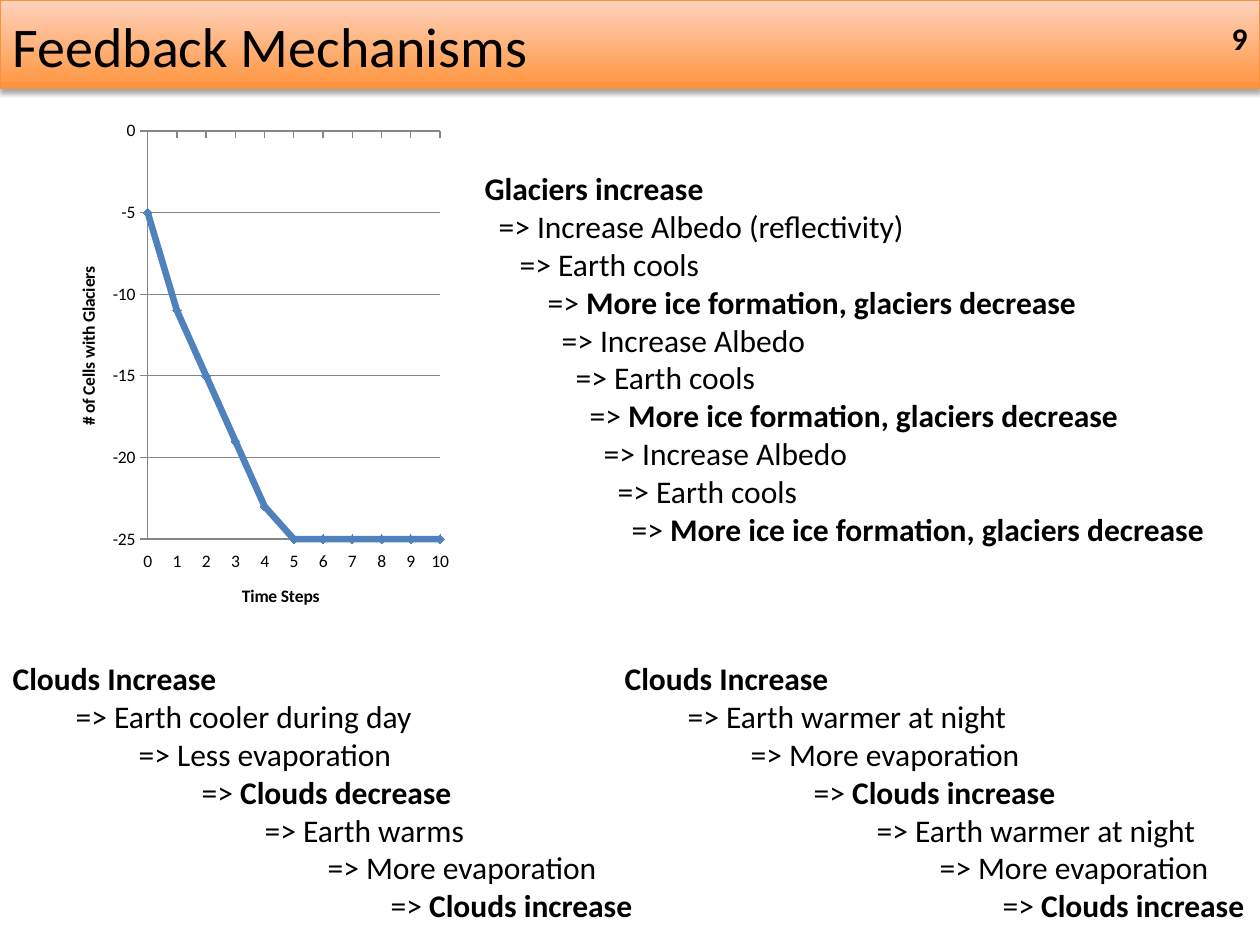
"""Builds the slide on feedback mechanisms between glaciers, clouds and climate."""
from dataclasses import dataclass

import lxml.etree
import pptx
import pptx.chart.data
import pptx.dml.color
import pptx.enum.chart
import pptx.enum.shapes
import pptx.enum.text
import pptx.oxml
import pptx.oxml.ns
import pptx.util


@dataclass(frozen=True)
class Theme:
    font: str = "Calibri"
    text: str = "000000"
    banner_bottom: str = "FF953E"
    banner_top: str = "FFD2BD"
    banner_line: str = "F69240"
    series: str = "4F81BD"
    axis: str = "868686"
    title_pt: int = 32
    body_pt: int = 18
    chart_pt: int = 10


THEME = Theme()
EMU_PER_PX = 914400 / 126
ARROW = "=> "
CLOUD_STEP = 63
GLACIER_INDENTS = [0, 14, 35] + [63 + 14 * i for i in range(7)]

GLACIERS = [
    ("Glaciers increase", True),
    ("Increase Albedo (reflectivity)", False),
    ("Earth cools", False),
    ("More ice formation, glaciers decrease", True),
    ("Increase Albedo", False),
    ("Earth cools", False),
    ("More ice formation, glaciers decrease", True),
    ("Increase Albedo", False),
    ("Earth cools", False),
    ("More ice ice formation, glaciers decrease", True),
]
CLOUDS_DAY = [
    ("Clouds Increase", True),
    ("Earth cooler during day", False),
    ("Less evaporation", False),
    ("Clouds decrease", True),
    ("Earth warms", False),
    ("More evaporation", False),
    ("Clouds increase", True),
]
CLOUDS_NIGHT = [
    ("Clouds Increase", True),
    ("Earth warmer at night", False),
    ("More evaporation", False),
    ("Clouds increase", True),
    ("Earth warmer at night", False),
    ("More evaporation", False),
    ("Clouds increase", True),
]
GLACIER_CELLS = [-5, -11, -15, -19, -23] + [-25] * 6


def px(n):
    return pptx.util.Emu(round(n * EMU_PER_PX))


def rgb(value):
    return pptx.dml.color.RGBColor.from_string(value)


def style(font, size, bold=False):
    font.name = THEME.font
    font.size = pptx.util.Pt(size)
    font.bold = bold
    font.color.rgb = rgb(THEME.text)


def place(sp, left, top, width, height):
    sp.left, sp.top, sp.width, sp.height = map(px, (left, top, width, height))


def set_frame(tf, anchor):
    tf.auto_size = pptx.enum.text.MSO_AUTO_SIZE.NONE
    tf.word_wrap = True
    tf.vertical_anchor = anchor


def add_banner(s):
    sp = s.shapes.add_shape(pptx.enum.shapes.MSO_SHAPE.RECTANGLE, 0, 0, px(1260), px(88))
    sp.fill.gradient()
    sp.fill.gradient_angle = 90
    for stop, color in zip(sp.fill.gradient_stops, (THEME.banner_bottom, THEME.banner_top)):
        stop.color.rgb = rgb(color)
    sp.line.color.rgb = rgb(THEME.banner_line)
    sp.line.width = pptx.util.Pt(0.75)
    sp.shadow.inherit = False
    effects = sp.element.spPr.find(pptx.oxml.ns.qn("a:effectLst"))
    effects.append(pptx.oxml.parse_xml(
        f'<a:outerShdw {pptx.oxml.ns.nsdecls("a")} blurRad="40000" dist="23000" dir="5400000" '
        'rotWithShape="0"><a:srgbClr val="000000"><a:alpha val="35000"/></a:srgbClr></a:outerShdw>'))
    s.shapes.element.insert(2, sp.element)


def fill_line(sp, text, size, align, anchor, bold=False):
    tf = sp.text_frame
    set_frame(tf, anchor)
    tf.text = text
    p = tf.paragraphs[0]
    p.alignment = align
    style(p.runs[0].font, size, bold)


def fill_chain(sp, box, steps, indents):
    place(sp, *box)
    tf = sp.text_frame
    set_frame(tf, pptx.enum.text.MSO_ANCHOR.TOP)
    for i, ((text, bold), indent) in enumerate(zip(steps, indents)):
        p = tf.paragraphs[0] if i == 0 else tf.add_paragraph()
        p.space_before = pptx.util.Pt(0)
        p.alignment = pptx.enum.text.PP_ALIGN.LEFT
        pPr = p._p.get_or_add_pPr()
        pPr.set("marL", str(px(indent)))
        pPr.set("indent", "0")
        lxml.etree.SubElement(pPr, pptx.oxml.ns.qn("a:buNone"))
        parts = [(ARROW, False), (text, bold)] if i else [(text, bold)]
        for part, heavy in parts:
            r = p.add_run()
            r.text = part
            style(r.font, THEME.body_pt, heavy)


def format_axis(axis, title, low, high, step):
    axis.minimum_scale, axis.maximum_scale, axis.major_unit = low, high, step
    axis.major_tick_mark = pptx.enum.chart.XL_TICK_MARK.OUTSIDE
    axis.minor_tick_mark = pptx.enum.chart.XL_TICK_MARK.NONE
    axis.tick_label_position = pptx.enum.chart.XL_TICK_LABEL_POSITION.LOW
    axis.format.line.color.rgb = rgb(THEME.axis)
    axis.format.line.width = pptx.util.Pt(0.75)
    axis.axis_title.text_frame.text = title
    style(axis.axis_title.text_frame.paragraphs[0].runs[0].font, THEME.chart_pt, True)


def set_plot_area(chart, x, y, w, h):
    area = chart._chartSpace.chart.plotArea
    for old in area.findall(pptx.oxml.ns.qn("c:layout")):
        area.remove(old)
    sizes = "".join(f'<c:{k} val="{v}"/>' for k, v in zip("xywh", (x, y, w, h)))
    area.insert(0, pptx.oxml.parse_xml(
        f'<c:layout {pptx.oxml.ns.nsdecls("c")}><c:manualLayout><c:layoutTarget val="inner"/>'
        f'<c:xMode val="edge"/><c:yMode val="edge"/>{sizes}</c:manualLayout></c:layout>'))


def add_glacier_chart(s):
    data = pptx.chart.data.XyChartData()
    series = data.add_series("Series 1")
    for step, cells in enumerate(GLACIER_CELLS):
        series.add_data_point(step, cells)
    chart = s.shapes.add_chart(pptx.enum.chart.XL_CHART_TYPE.XY_SCATTER_LINES,
                               px(66), px(116), px(430), px(498), data).chart
    chart.has_legend = False
    chart.has_title = False
    style(chart.font, THEME.chart_pt)
    format_axis(chart.category_axis, "Time Steps", 0, 10, 1)
    format_axis(chart.value_axis, "# of Cells with Glaciers", -25, 0, 5)
    chart.category_axis.has_major_gridlines = False
    grid = chart.value_axis.major_gridlines.format.line
    grid.color.rgb = rgb(THEME.axis)
    grid.width = pptx.util.Pt(0.75)
    set_plot_area(chart, 0.19, 0.03, 0.68, 0.82)
    plot = chart.plots[0]
    plot.vary_by_categories = False
    line = plot.series[0]
    line.smooth = False
    line.format.line.color.rgb = rgb(THEME.series)
    line.format.line.width = pptx.util.Pt(3.75)
    line.marker.style = pptx.enum.chart.XL_MARKER_STYLE.DIAMOND
    line.marker.size = 5
    line.marker.format.fill.solid()
    line.marker.format.fill.fore_color.rgb = rgb(THEME.series)
    line.marker.format.line.color.rgb = rgb(THEME.series)


def main():
    prs = pptx.Presentation()
    prs.slide_width, prs.slide_height = px(1260), px(945)
    s = prs.slides.add_slide(prs.slide_layouts.get_by_name("Comparison"))
    title, day, night, glaciers, spare = s.placeholders
    spare.element.getparent().remove(spare.element)

    add_banner(s)
    place(title, 0, 5, 546, 81)
    fill_line(title, "Feedback Mechanisms", THEME.title_pt,
              pptx.enum.text.PP_ALIGN.LEFT, pptx.enum.text.MSO_ANCHOR.TOP)
    number = s.shapes.add_textbox(px(966), px(13), px(294), px(50))
    fill_line(number, "9", THEME.body_pt,
              pptx.enum.text.PP_ALIGN.RIGHT, pptx.enum.text.MSO_ANCHOR.MIDDLE, True)

    cloud_indents = [CLOUD_STEP * i for i in range(len(CLOUDS_DAY))]
    fill_chain(day, (0, 653, 648, 280), CLOUDS_DAY, cloud_indents)
    fill_chain(night, (612, 653, 648, 280), CLOUDS_NIGHT, cloud_indents)
    fill_chain(glaciers, (472, 163, 756, 394), GLACIERS, GLACIER_INDENTS)
    add_glacier_chart(s)
    prs.save("out.pptx")


if __name__ == "__main__":
    main()
